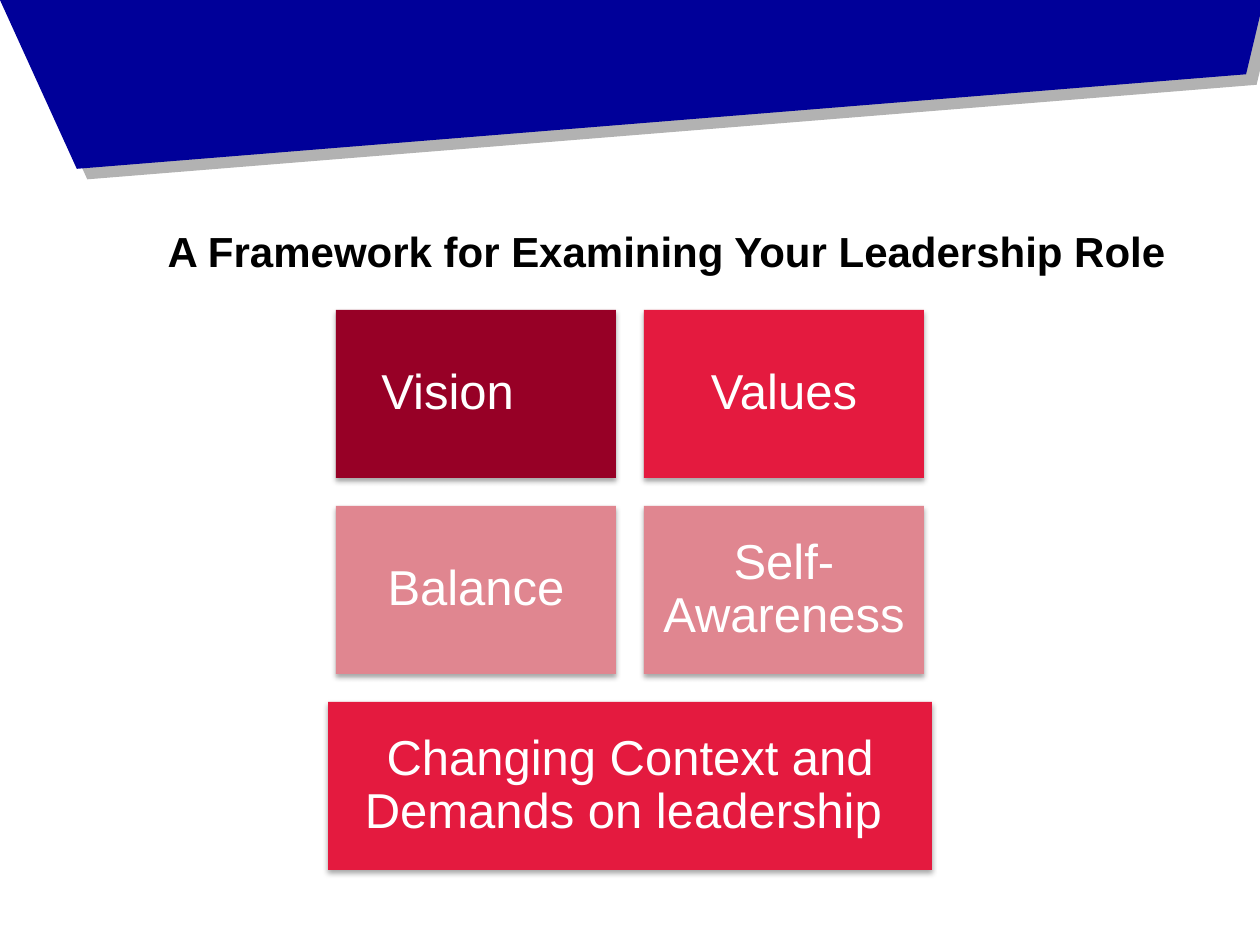
from dataclasses import dataclass

import lxml.etree
import pptx
import pptx.enum.shapes
import pptx.enum.text
import pptx.oxml.ns
import pptx.util
from pptx.shapes.autoshape import Shape
from pptx.slide import Slide
from pptx.text.text import TextFrame

Inches = pptx.util.Inches
Pt = pptx.util.Pt
Align = pptx.enum.text.PP_ALIGN
Anchor = pptx.enum.text.MSO_ANCHOR

COLORS = {
    "navy": "000099", "gray": "B2B2B2", "black": "000000", "white": "FFFFFF",
    "maroon": "970026", "red": "E41A3F", "rose": "E08690",
}
WIDTH, HEIGHT = 10, 7.5

# Card grid: one unit is the gap between cards
UNIT = WIDTH / 45
CARD_WIDTH, CARD_HEIGHT = 10 * UNIT, 6 * UNIT
GRID_LEFT, GRID_TOP = 12 * UNIT, 2.46
WIDE_WIDTH = 4.79


@dataclass(frozen=True)
class Shadow:
    color: str
    opacity: int
    blur: float
    distance: float
    angle: int


@dataclass(frozen=True)
class Card:
    text: str
    row: int
    column: int
    color: str
    wide: bool = False


BANNER_SHADOW = Shadow("gray", 100, 0, 8.5, 45)
CARD_SHADOW = Shadow("black", 35, 3.1, 1.8, 90)
BANNER_POINTS = [(9.89, 0.59), (0.61, 1.34), (0, 0), (10.03, 0)]
CARDS = [
    Card("Vision \t", 0, 0, "maroon"),
    Card("Values", 0, 1, "red"),
    Card("Balance", 1, 0, "rose"),
    Card("Self-Awareness", 1, 1, "rose"),
    Card("Changing Context and Demands on leadership ", 2, 0, "red", wide=True),
]


def rgb(name: str) -> pptx.dml.color.RGBColor:
    return pptx.dml.color.RGBColor.from_string(COLORS[name])


def apply_format(target: object, values: dict) -> None:
    for name, value in values.items():
        setattr(target, name, value)


def paint(shape: Shape, color: str, shadow: Shadow) -> None:
    """Fill the shape, drop its outline and cast a shadow."""
    shape.fill.solid()
    shape.fill.fore_color.rgb = rgb(color)
    shape.line.fill.background()
    shape.shadow.inherit = False
    qn = pptx.oxml.ns.qn
    effects = shape.element.spPr.find(qn("a:effectLst"))
    outer = lxml.etree.SubElement(effects, qn("a:outerShdw"), {
        "blurRad": str(Pt(shadow.blur)), "dist": str(Pt(shadow.distance)),
        "dir": str(shadow.angle * 60000), "algn": "ctr", "rotWithShape": "0",
    })
    tint = lxml.etree.SubElement(outer, qn("a:srgbClr"), val=COLORS[shadow.color])
    lxml.etree.SubElement(tint, qn("a:alpha"), val=str(shadow.opacity * 1000))


def write(frame: TextFrame, text: str, color: str, frame_format: dict,
          para_format: dict, font_format: dict) -> None:
    apply_format(frame, frame_format)
    para = frame.paragraphs[0]
    apply_format(para, para_format)
    span = para.add_run()
    span.text = text
    apply_format(span.font, {"name": "Arial", **font_format})
    span.font.color.rgb = rgb(color)


def draw_banner(page: Slide) -> None:
    builder = page.shapes.build_freeform(
        *map(Inches, BANNER_POINTS[0]), scale=1.0)
    builder.add_line_segments(
        [(Inches(x), Inches(y)) for x, y in BANNER_POINTS[1:]], close=True)
    paint(builder.convert_to_shape(), "navy", BANNER_SHADOW)


def draw_title(page: Slide) -> None:
    title = page.shapes.title
    apply_format(title, {"left": Inches(1.23), "top": Inches(1.74),
                         "width": Inches(8.2), "height": Inches(0.5)})
    write(title.text_frame, "A Framework for Examining Your Leadership Role", "black",
          {"word_wrap": False, "vertical_anchor": Anchor.TOP,
           "auto_size": pptx.enum.text.MSO_AUTO_SIZE.SHAPE_TO_FIT_TEXT},
          {"alignment": Align.LEFT, "space_before": Pt(0)},
          {"size": Pt(24), "bold": True})


def draw_card(page: Slide, card: Card) -> None:
    width = WIDE_WIDTH if card.wide else CARD_WIDTH
    left = ((WIDTH - width) / 2 if card.wide
            else GRID_LEFT + card.column * (CARD_WIDTH + UNIT))
    top = GRID_TOP + card.row * (CARD_HEIGHT + UNIT)
    box = page.shapes.add_shape(
        pptx.enum.shapes.MSO_SHAPE.RECTANGLE,
        *map(Inches, (left, top, width, CARD_HEIGHT)))
    paint(box, card.color, CARD_SHADOW)
    margins = {f"margin_{side}": Inches(0.12)
               for side in ("left", "top", "right", "bottom")}
    write(box.text_frame, card.text, "white",
          {**margins, "word_wrap": True, "vertical_anchor": Anchor.MIDDLE},
          {"alignment": Align.CENTER, "line_spacing": 0.9},
          {"size": Pt(28)})


def main() -> None:
    deck = pptx.Presentation()
    deck.slide_width, deck.slide_height = Inches(WIDTH), Inches(HEIGHT)
    page = deck.slides.add_slide(deck.slide_layouts[5])
    # Banner and heading
    draw_banner(page)
    draw_title(page)
    # Framework cards
    for card in CARDS:
        draw_card(page, card)
    deck.save("out.pptx")


if __name__ == "__main__":
    main()
